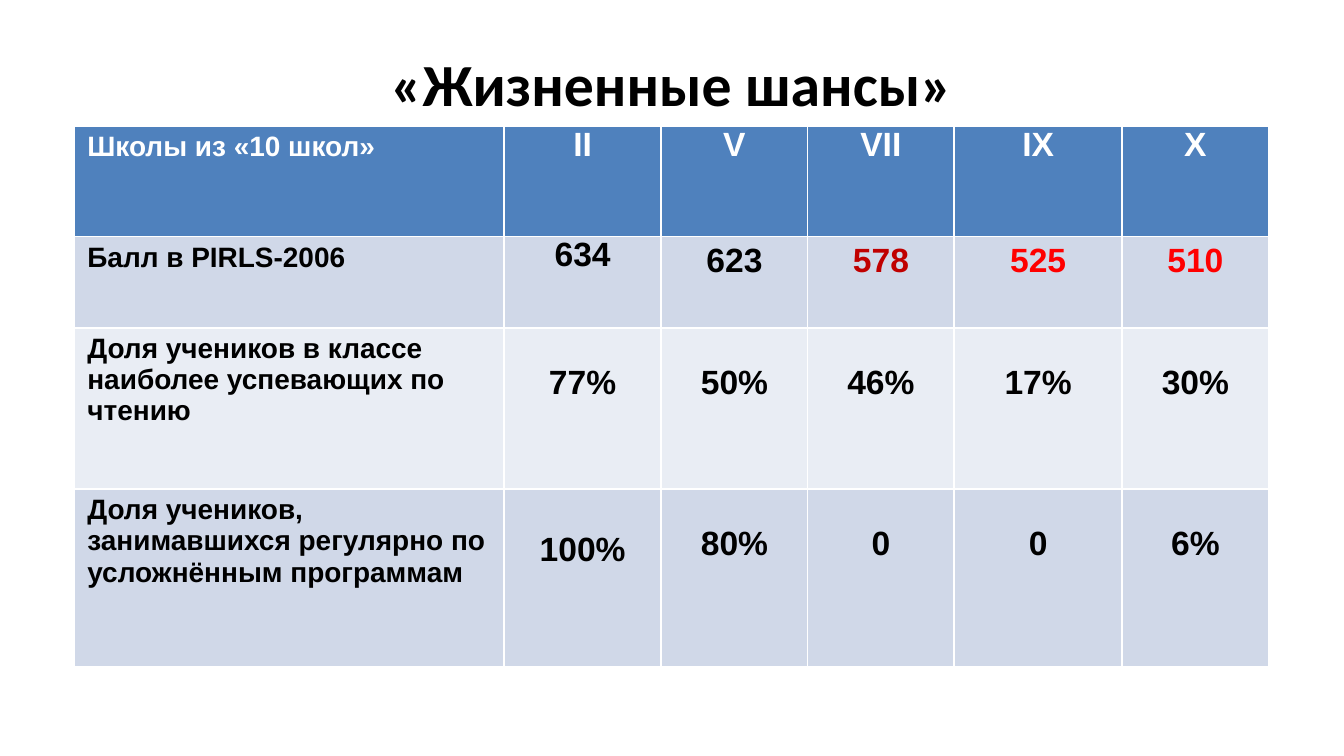
from lxml import etree
from pptx import Presentation
from pptx.dml.color import RGBColor
from pptx.enum.text import MSO_ANCHOR, PP_ALIGN
from pptx.oxml.ns import qn
from pptx.util import Inches, Pt

LEFT, CENTER = PP_ALIGN.LEFT, PP_ALIGN.CENTER
TOP, MIDDLE = MSO_ANCHOR.TOP, MSO_ANCHOR.MIDDLE

COLORS = {
    "black": "000000",
    "white": "FFFFFF",
    "header": "4F81BD",
    "band": "D0D8E8",
    "light": "E9EDF4",
    "dark_red": "C00000",
    "red": "FF0000",
}

COLUMN_WIDTHS = [3.2, 1.17, 1.09, 1.09, 1.25, 1.09]
# Row height, fill, texts
ROWS = [
    (0.82, "header", ["Школы из «10 школ»", "II", "V", "VII", "IX", "X"]),
    (0.68, "band", ["Балл в PIRLS-2006", "634", "623", "578", "525", "510"]),
    (1.2, "light", ["Доля учеников в классе наиболее успевающих по чтению",
                    "77%", "50%", "46%", "17%", "30%"]),
    (1.32, "band", ["Доля учеников, занимавшихся регулярно по усложнённым программам",
                    "100%", "80%", "0", "0", "6%"]),
]
LOW_SCORES = {"578": "dark_red", "525": "red", "510": "red"}

# Cell margins: left, top, right, bottom
ROOMY = (0.1, 0.04, 0.1, 0.04)
TIGHT = (0.07, 0, 0.07, 0)
ROOMY_VALUES = {"623", "578", "525", "510", "100%"}
LINE_DROP = 0.27  # shares sit about one line below the cell top


def rgb(name):
    return RGBColor.from_string(COLORS[name])


def write(frame, text, size, font, color, align):
    paragraph = frame.paragraphs[0]
    paragraph.alignment = align
    run = paragraph.add_run()
    run.text = text
    style = {"size": Pt(size), "name": font, "bold": True}
    for attribute, value in style.items():
        setattr(run.font, attribute, value)
    run.font.color.rgb = rgb(color)


def set_margins(target, margins):
    for side, margin in zip(("left", "top", "right", "bottom"), margins):
        setattr(target, f"margin_{side}", Inches(margin))


def set_borders(cell, color, width):
    properties = cell._tc.get_or_add_tcPr()
    for position, side in enumerate(("lnL", "lnR", "lnT", "lnB")):
        line = etree.Element(qn(f"a:{side}"), w=str(Pt(width)))
        fill = etree.SubElement(line, qn("a:solidFill"))
        etree.SubElement(fill, qn("a:srgbClr"), val=COLORS[color])
        properties.insert(position, line)


def add_title(slide, text):
    box = slide.shapes.add_textbox(Inches(0.5), Inches(0.23), Inches(9), Inches(0.77))
    frame = box.text_frame
    frame.word_wrap = True
    frame.vertical_anchor = MIDDLE
    write(frame, text, 32, "Calibri", "black", CENTER)


def cell_margins(row, column, text):
    left, top, right, bottom = ROOMY if column == 0 or text in ROOMY_VALUES else TIGHT
    if row >= 2 and column > 0:
        top += LINE_DROP
    return left, top, right, bottom


def fill_cell(cell, row, column, text, fill):
    cell.fill.solid()
    cell.fill.fore_color.rgb = rgb(fill)
    set_borders(cell, "white", 1)
    set_margins(cell, cell_margins(row, column, text))
    cell.vertical_anchor = TOP
    color = "white" if row == 0 else LOW_SCORES.get(text, "black")
    size, align = (15, LEFT) if column == 0 else (18, CENTER)
    write(cell.text_frame, text, size, "Arial", color, align)


def add_school_table(slide):
    height = sum(row_height for row_height, _, _ in ROWS)
    table = slide.shapes.add_table(
        len(ROWS), len(COLUMN_WIDTHS), Inches(0.55), Inches(0.94),
        Inches(sum(COLUMN_WIDTHS)), Inches(height)).table
    for column, width in zip(table.columns, COLUMN_WIDTHS):
        column.width = Inches(width)
    for row, (row_height, fill, texts) in enumerate(ROWS):
        table.rows[row].height = Inches(row_height)
        for column, text in enumerate(texts):
            fill_cell(table.cell(row, column), row, column, text, fill)


def main():
    presentation = Presentation()
    presentation.slide_width = Inches(10)
    presentation.slide_height = Inches(10) * 9 // 16  # widescreen 16:9
    slide = presentation.slides.add_slide(presentation.slide_layouts[6])

    # Heading
    add_title(slide, "«Жизненные шансы»")
    # Schools compared by score and shares of pupils
    add_school_table(slide)

    presentation.save("out.pptx")


if __name__ == "__main__":
    main()
